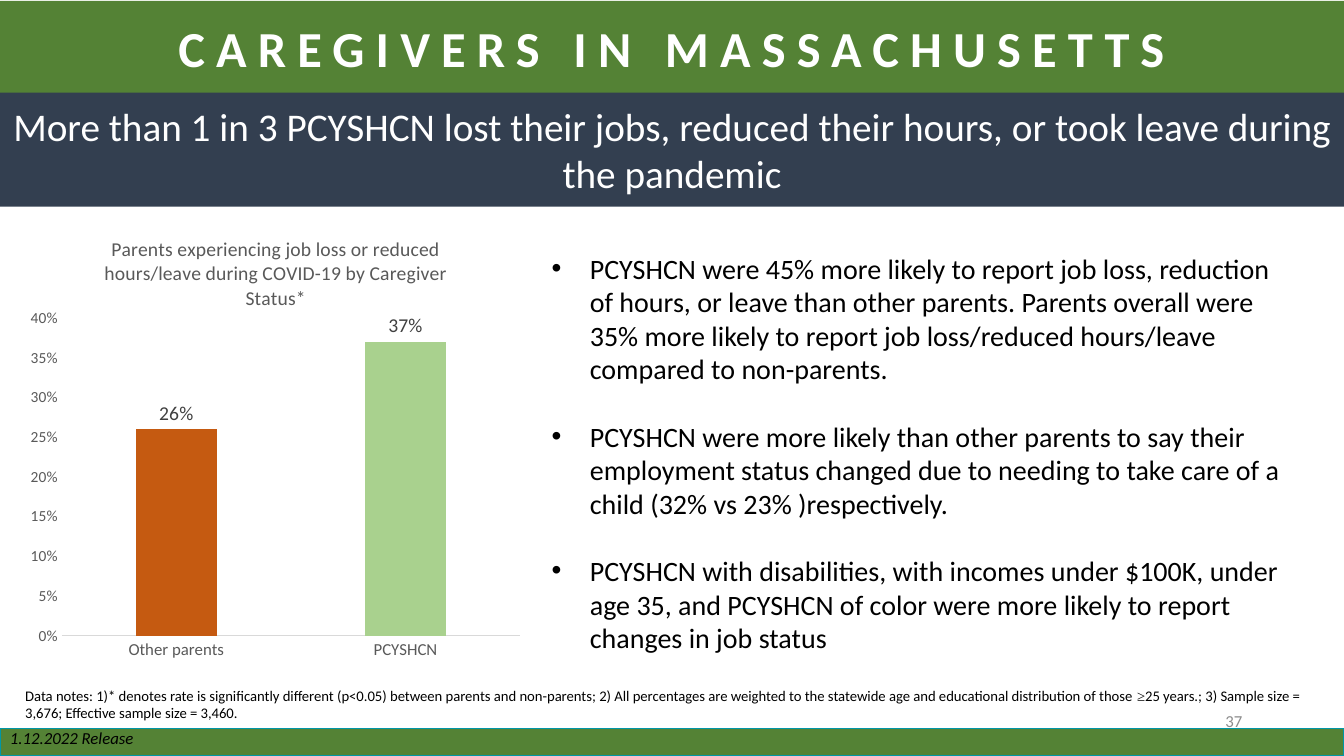
from dataclasses import dataclass

from lxml import etree
from pptx import Presentation
from pptx.chart.data import CategoryChartData
from pptx.dml.color import RGBColor
from pptx.enum import chart as charts, shapes, text
from pptx.oxml import ns
from pptx.util import Inches, Pt


@dataclass(frozen=True)
class Theme:
    font: str = "Calibri"
    symbol_font: str = "Times New Roman"
    green: str = "548235"
    teal: str = "0097A7"
    navy: str = "333F50"
    orange: str = "C55A11"
    light_green: str = "A9D18E"
    white: str = "FFFFFF"
    black: str = "000000"
    label_gray: str = "404040"
    axis_gray: str = "595959"
    number_gray: str = "8C8C8C"
    rule_gray: str = "D9D9D9"
    title: float = 36
    headline: float = 28
    body: float = 20
    chart: float = 14
    category: float = 12
    scale: float = 11
    footer: float = 12
    note: float = 10.5


theme = Theme()


def style(font, size, color, name=theme.font):
    font.name, font.size = name, Pt(size)
    font.color.rgb = RGBColor.from_string(color)


def place(box, left, top, width, height, fill=None):
    """Position a shape, fill it if asked, and return its wrapping text frame."""
    box.left, box.top = Inches(left), Inches(top)
    box.width, box.height = Inches(width), Inches(height)
    if fill:
        box.fill.solid()
        box.fill.fore_color.rgb = RGBColor.from_string(fill)
    box.text_frame.word_wrap = True
    box.text_frame.auto_size = text.MSO_AUTO_SIZE.NONE
    return box.text_frame


deck = Presentation()
deck.slide_width, deck.slide_height = Inches(13.33), Inches(7.5)
page = deck.slides.add_slide(deck.slide_layouts[1])

# Title band
frame = place(page.shapes.title, 0, 0.01, 13.33, 1, theme.green)
frame.vertical_anchor = text.MSO_ANCHOR.MIDDLE
para = frame.paragraphs[0]
para.alignment = text.PP_ALIGN.CENTER
para.line_spacing = 0.9
span = para.add_run()
span.text = "CAREGIVERS IN MASSACHUSETTS"
style(span.font, theme.title, theme.white)
span.font.bold = True
span.font._element.set("spc", "800")

# Footer and headline bands
footer_band, headline_band = [
    page.shapes.add_shape(shapes.MSO_SHAPE.RECTANGLE, 0, 0, 0, 0) for _ in range(2)
]
for band in (footer_band, headline_band):
    band.shadow.inherit = False
    band.line.fill.background()
place(footer_band, 0, 7.23, 13.33, 0.27, theme.green)
footer_band.line.color.rgb = RGBColor.from_string(theme.teal)
footer_band.line.width = Pt(1)

frame = place(headline_band, 0, 0.92, 13.33, 1.13, theme.navy)
frame.vertical_anchor = text.MSO_ANCHOR.MIDDLE
para = frame.paragraphs[0]
para.alignment = text.PP_ALIGN.CENTER
span = para.add_run()
span.text = (
    "More than 1 in 3 PCYSHCN lost their jobs, reduced their hours, "
    "or took leave during the pandemic"
)
style(span.font, theme.headline, theme.white)

# Findings
findings = [
    "PCYSHCN were 45% more likely to report job loss, reduction of hours, or leave "
    "than other parents. Parents overall were 35% more likely to report job "
    "loss/reduced hours/leave compared to non-parents.",
    "PCYSHCN were more likely than other parents to say their employment status "
    "changed due to needing to take care of a child (32% vs 23% )respectively.",
    "PCYSHCN with disabilities, with incomes under $100K, under age 35, and PCYSHCN "
    "of color were more likely to report changes in job status",
]
frame = place(page.placeholders[1], 5.37, 2.44, 7.44, 4.14)
for index, finding in enumerate(findings):
    para = frame.paragraphs[0] if index == 0 else frame.add_paragraph()
    para.line_spacing = 1.0
    para.space_before = Pt(24 if index else 0)
    para.space_after = Pt(0)
    props = para._p.get_or_add_pPr()
    props.set("marL", str(Inches(0.38)))
    props.set("indent", str(Inches(-0.38)))
    etree.SubElement(props, ns.qn("a:buFont"), typeface="Arial")
    etree.SubElement(props, ns.qn("a:buChar"), char="•")
    span = para.add_run()
    span.text = finding
    style(span.font, theme.body, theme.black)

# Data notes
frame = place(page.shapes.add_textbox(0, 0, 0, 0), 0.12, 6.74, 13.08, 0.49)
frame.margin_left = frame.margin_right = Inches(0.13)
frame.margin_top = frame.margin_bottom = Inches(0.07)
para = frame.paragraphs[0]
for words, font_name in [
    ("Data notes: 1)* denotes rate is significantly different (p<0.05) between parents "
     "and non-parents; 2) All percentages are weighted to the statewide age and "
     "educational distribution of those ", theme.font),
    ("≥", theme.symbol_font),
    ("25 years.; 3) Sample size = 3,676; Effective sample size = 3,460.", theme.font),
]:
    span = para.add_run()
    span.text = words
    style(span.font, theme.note, theme.black, font_name)

# Job loss chart
data = CategoryChartData(number_format="0%")
data.categories = ["Other parents", "PCYSHCN"]
data.add_series("Series 1", [0.26, 0.37])
chart = page.shapes.add_chart(
    charts.XL_CHART_TYPE.COLUMN_CLUSTERED,
    Inches(0.21), Inches(2.28), Inches(5.05), Inches(4.38), data,
).chart
style(chart.font, 10, theme.black)
chart.has_legend = False
chart.has_title = True
chart.chart_title.include_in_layout = False
span = chart.chart_title.text_frame.paragraphs[0].add_run()
span.text = (
    "Parents experiencing job loss or reduced hours/leave during COVID-19 "
    "by Caregiver Status*"
)
style(span.font, theme.chart, theme.axis_gray)
span.font.bold = False

plot = chart.plots[0]
plot.gap_width = 182
plot.vary_by_categories = False
series = plot.series[0]
for index, color in enumerate([theme.orange, theme.light_green]):
    fill = series.points[index].format.fill
    fill.solid()
    fill.fore_color.rgb = RGBColor.from_string(color)
labels = series.data_labels
labels.show_value = True
labels.position = charts.XL_LABEL_POSITION.OUTSIDE_END
labels.number_format, labels.number_format_is_linked = "0%", False
style(labels.font, theme.chart, theme.label_gray)

for axis, size in [(chart.category_axis, theme.category), (chart.value_axis, theme.scale)]:
    axis.major_tick_mark = axis.minor_tick_mark = charts.XL_TICK_MARK.NONE
    axis.has_major_gridlines = False
    style(axis.tick_labels.font, size, theme.axis_gray)
chart.category_axis.format.line.color.rgb = RGBColor.from_string(theme.rule_gray)
chart.category_axis.format.line.width = Pt(0.75)
scale = chart.value_axis
scale.format.line.fill.background()
scale.minimum_scale, scale.maximum_scale, scale.major_unit = 0, 0.4, 0.05
scale.tick_labels.number_format, scale.tick_labels.number_format_is_linked = "0%", False

plot_area = chart._chartSpace.find(".//" + ns.qn("c:plotArea"))
for old_layout in plot_area.findall(ns.qn("c:layout")):
    plot_area.remove(old_layout)
layout = etree.Element(ns.qn("c:layout"))
plot_area.insert(0, layout)
manual = etree.SubElement(layout, ns.qn("c:manualLayout"))
for tag, value in [("layoutTarget", "inner"), ("xMode", "edge"), ("yMode", "edge"),
                   ("x", "0.08"), ("y", "0.2"), ("w", "0.9"), ("h", "0.72")]:
    etree.SubElement(manual, ns.qn(f"c:{tag}"), val=value)

# Release date and page number
for words, left, top, height, align, color, italic in [
    ("1.12.2022 Release", 0, 7.18, 0.28, text.PP_ALIGN.LEFT, theme.black, True),
    ("37", 9.42, 6.95, 0.4, text.PP_ALIGN.RIGHT, theme.number_gray, False),
]:
    frame = place(page.shapes.add_textbox(0, 0, 0, 0), left, top, 3, height)
    frame.vertical_anchor = text.MSO_ANCHOR.MIDDLE
    para = frame.paragraphs[0]
    para.alignment = align
    span = para.add_run()
    span.text = words
    style(span.font, theme.footer, color)
    span.font.italic = italic

deck.save("out.pptx")
